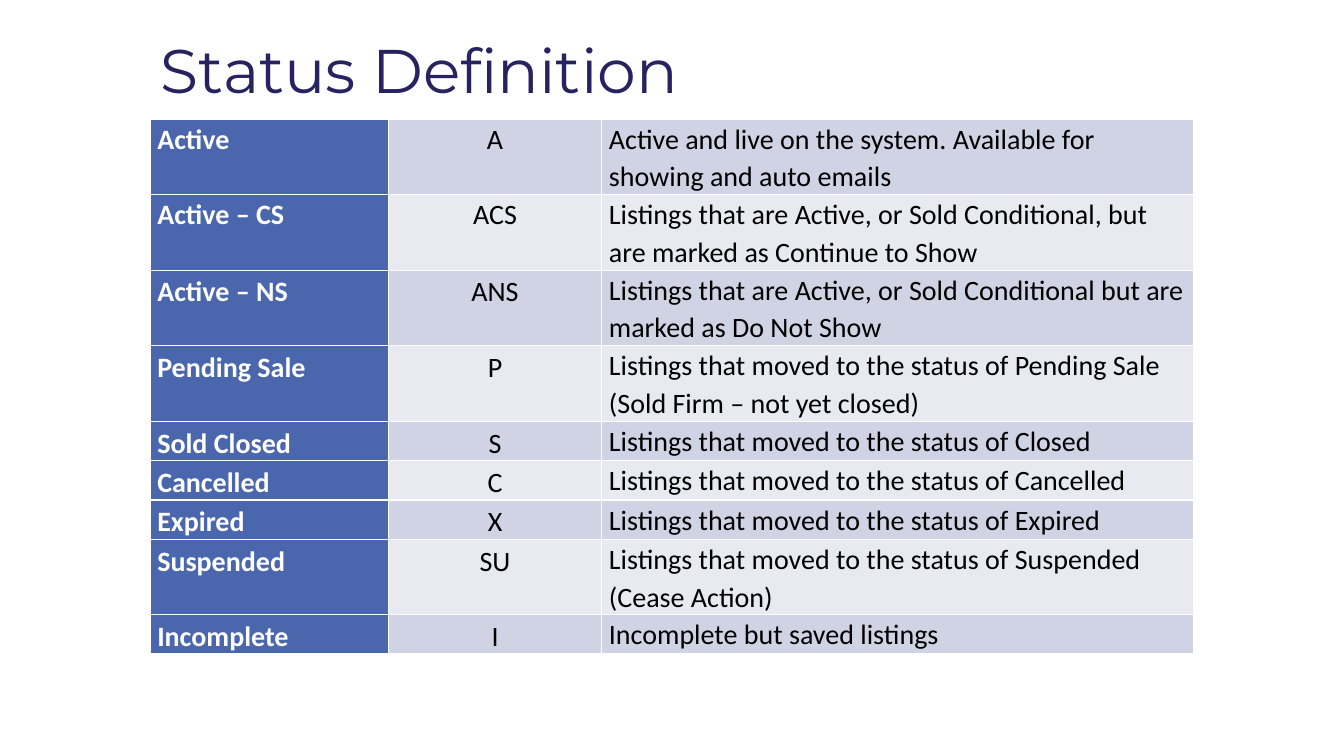
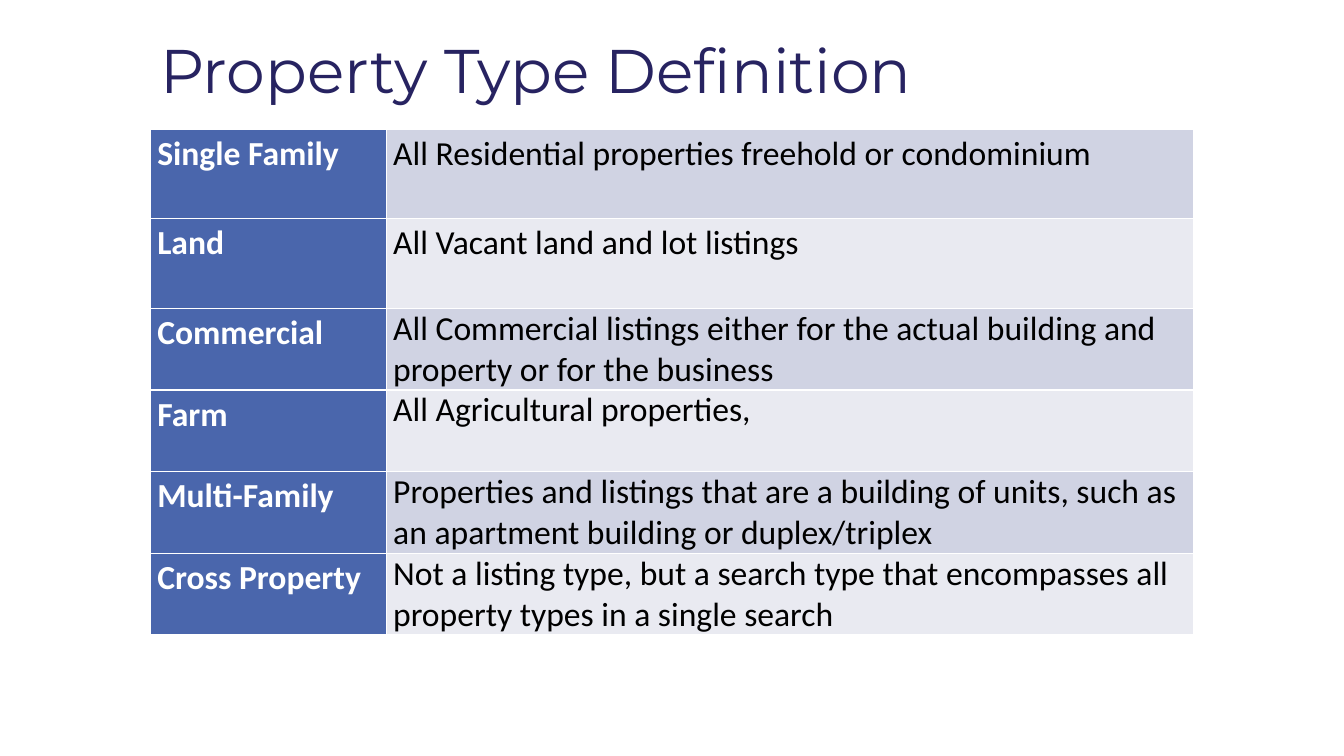
"""Build two definition slides, each with a title and a banded table."""
from lxml.etree import SubElement
from pptx import Presentation
from pptx.dml.color import RGBColor
from pptx.enum.text import MSO_ANCHOR, PP_ALIGN
from pptx.oxml.ns import qn
from pptx.util import Inches, Pt

THEME = {
    "navy": "272361", "blue": "4A66AC", "bands": ("D0D3E3", "E9EAF1"),
    "white": "FFFFFF", "black": "000000",
    "head": "Montserrat", "body": "Calibri", "title": 44, "rule": 1,
}
LEFT, WIDTH = Inches(1.49), Inches(10.35)
EARLY = 1.1

DECK = [
    {
        "title": "Status Definition", "top": 1.18, "size": 20,
        "cols": (2.36, 2.12, 5.87), "late": (1.15, 1.15, 1.1),
        "rows": [
            (0.75, "Active", "A", "Active and live on the system. Available for showing and auto emails"),
            (0.75, "Active – CS", "ACS", "Listings that are Active, or Sold Conditional, but are marked as Continue to Show"),
            (0.75, "Active – NS", "ANS", "Listings that are Active, or Sold Conditional but are marked as Do Not Show"),
            (0.75, "Pending Sale", "P", "Listings that moved to the status of Pending Sale (Sold Firm – not yet closed)"),
            (0.39, "Sold Closed", "S", "Listings that moved to the status of Closed"),
            (0.39, "Cancelled", "C", "Listings that moved to the status of Cancelled"),
            (0.39, "Expired", "X", "Listings that moved to the status of Expired"),
            (0.75, "Suspended", "SU", "Listings that moved to the status of Suspended (Cease Action)"),
            (0.39, "Incomplete", "I", "Incomplete but saved listings"),
        ],
    },
    {
        "title": "Property Type Definition", "top": 1.28, "size": 24,
        "cols": (2.34, 8.01), "late": (1.1, 1.0),
        "rows": [
            (0.89, "Single Family", "All Residential properties freehold or condominium"),
            (0.89, "Land", "All Vacant land and lot listings"),
            (0.81, "Commercial", "All Commercial listings either for the actual building and property or for the business"),
            (0.81, "Farm", "All Agricultural properties,"),
            (0.81, "Multi-Family", "Properties and listings that are a building of units, such as an apartment building or duplex/triplex"),
            (0.81, "Cross Property", "Not a listing type, but a search type that encompasses all property types in a single search"),
        ],
    },
]


def write(frame, text, font, size, color, bold, align, pitch):
    para = frame.paragraphs[0]
    para.alignment, para.line_spacing = align, pitch
    run = para.add_run()
    run.text = text
    for name, value in {"name": font, "size": Pt(size), "bold": bold}.items():
        setattr(run.font, name, value)
    run.font.color.rgb = RGBColor.from_string(color)


def style(cell, fill):
    edges = {"margin_left": 0.07, "margin_right": 0.07, "margin_top": 0, "margin_bottom": 0}
    for name, value in edges.items():
        setattr(cell, name, Inches(value))
    props = cell._tc.get_or_add_tcPr()
    for side in ("lnL", "lnR", "lnT", "lnB"):
        line = SubElement(props, qn(f"a:{side}"), w=str(Pt(THEME["rule"])))
        solid = SubElement(line, qn("a:solidFill"))
        SubElement(solid, qn("a:srgbClr"), val=THEME["white"])
    cell.fill.solid()
    cell.fill.fore_color.rgb = RGBColor.from_string(fill)


deck = Presentation()
deck.slide_width, deck.slide_height = Inches(13.33), Inches(7.5)

for page in DECK:
    slide = deck.slides.add_slide(deck.slide_layouts[6])
    frame = slide.shapes.add_textbox(LEFT, 0, WIDTH, Inches(1.45)).text_frame
    frame.word_wrap, frame.vertical_anchor = True, MSO_ANCHOR.MIDDLE
    write(frame, page["title"], THEME["head"], THEME["title"], THEME["navy"], False, PP_ALIGN.LEFT, 0.9)

    rows, cols = page["rows"], page["cols"]
    high = Inches(sum(row[0] for row in rows))
    table = slide.shapes.add_table(len(rows), len(cols), LEFT, Inches(page["top"]), WIDTH, high).table
    table.first_row, table.first_col, table.horz_banding = False, True, False
    for col, wide in zip(table.columns, cols):
        col.width = Inches(wide)

    for r, (tall, *texts) in enumerate(rows):
        table.rows[r].height = Inches(tall)
        for c, text in enumerate(texts):
            cell, lead = table.cell(r, c), c == 0
            style(cell, THEME["blue"] if lead else THEME["bands"][r % 2])
            color = THEME["white"] if lead else THEME["black"]
            align = PP_ALIGN.CENTER if 0 < c < len(cols) - 1 else PP_ALIGN.LEFT
            pitch = EARLY if r < 2 else page["late"][c]
            write(cell.text_frame, text, THEME["body"], page["size"], color, lead, align, pitch)

deck.save("out.pptx")
